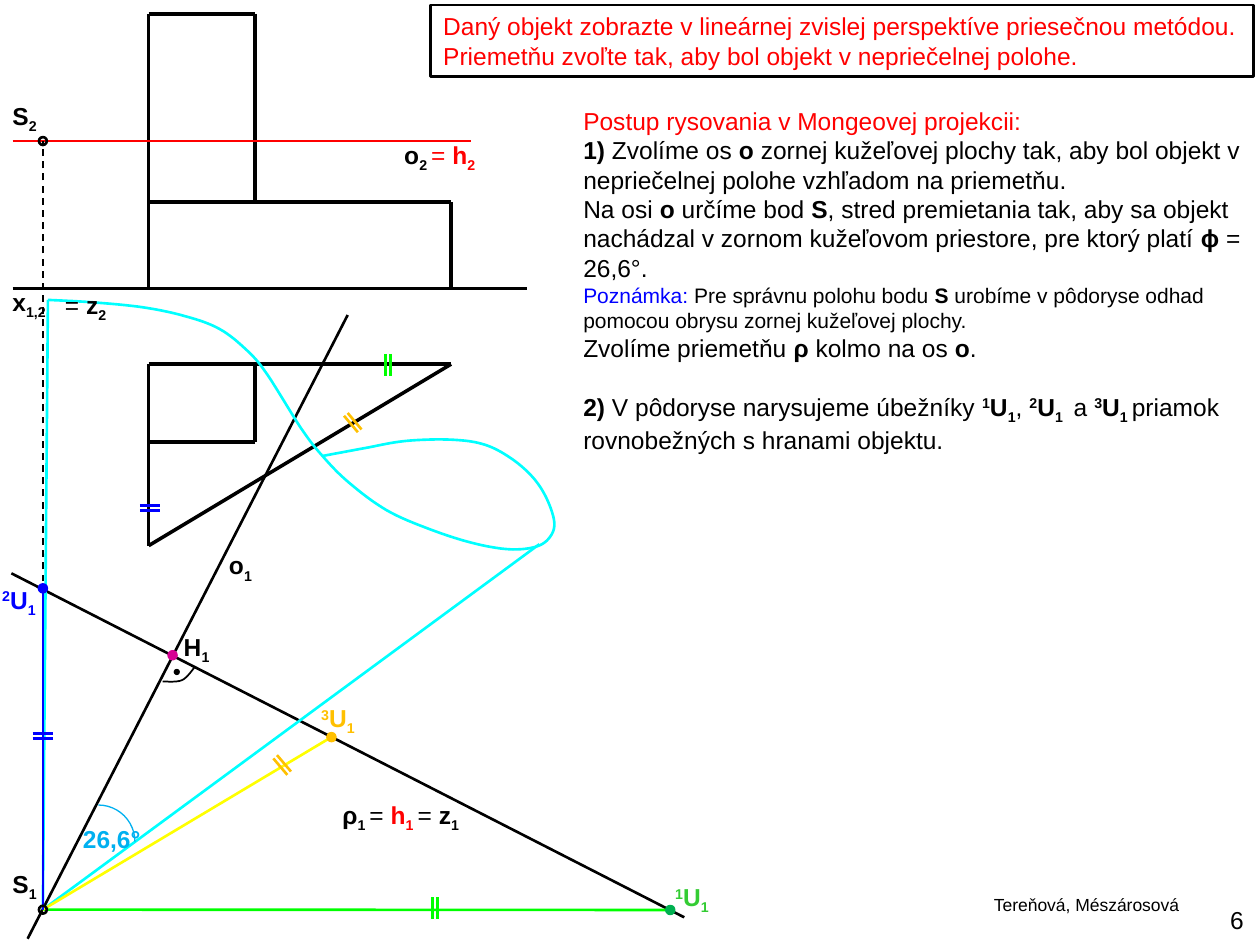
import pptx
import pptx.dml.color
import pptx.enum.dml
import pptx.enum.shapes
import pptx.enum.text
import pptx.util
from pptx.oxml.ns import qn
from lxml import etree

Pt = pptx.util.Pt
RGB = pptx.dml.color.RGBColor
SHAPES = pptx.enum.shapes.MSO_SHAPE
ALIGN = pptx.enum.text.PP_ALIGN
BLACK = RGB(0, 0, 0)
RED = RGB(255, 0, 0)
BLUE = RGB(0, 0, 255)
GREEN = RGB(0, 255, 0)
CYAN = RGB(0, 255, 255)
YELLOW = RGB(255, 255, 0)
ORANGE = RGB(0xFF, 0xC0, 0)
MAGENTA = RGB(0xD6, 0, 0x93)
DARK_GREEN = RGB(0, 0xB0, 0x50)
LABEL_GREEN = RGB(0x33, 0xCC, 0x33)
SKY = RGB(0, 0xB0, 0xF0)

# Points shared by several elements of the construction
S1, S2 = (24.5, 519.8), (24.5, 80.6)
U1, U2, U3 = (383, 520), (24.5, 336.2), (189.4, 421.2)
H1 = (98.6, 374.4)

BASELINES = {"^": "30000", "_": "-25000"}

FRONT_VIEW = [
    [(85, 115.5), (85, 165), (257.8, 165), (257.8, 115.5), (85, 115.5)],
    [(85, 115.5), (85, 7.9), (145.8, 7.9), (145.8, 115.5)],
]
TOP_VIEW = [
    [(85, 208.1), (257.8, 208.1), (85, 311.8), (85, 208.1)],
    [(145.8, 208.1), (145.8, 252.7), (85, 252.7)],
]
CONE_OUTLINE = [
    (27.4, 171.4), (53.3, 172.8), (82.1, 175.7), (105.8, 180.7), (125.3, 187.9),
    (141.1, 200.2), (152.6, 213.8), (172.1, 244.8), (184.3, 260.6), (199.4, 275.8),
    (221, 291.6), (245.5, 302.4), (270, 310.3), (290.9, 313.9), (306, 312.5),
    (313.9, 307.4), (316.8, 298.8), (312.5, 285.1), (304.6, 272.9), (292.3, 262.1),
    (277.2, 254.2), (258.5, 251.3), (231.8, 252), (207.4, 256.3), (184.3, 260.6),
]
RIGHT_ANGLE = [(111.6, 380.9), (104.1, 388.7), (92.9, 389.5)]

# Parallel marks: start, end, offset of the second stroke, colour
MARKS = [
    ((220.3, 202.3), (220.3, 214.6), (2.9, 0), GREEN),
    ((247, 512.6), (247, 524.9), (2.9, 0), GREEN),
    ((79.9, 288.7), (91.4, 288.7), (0, 2.9), BLUE),
    ((18.7, 419), (30.2, 419), (0, 2.9), BLUE),
    ((196.6, 237.6), (204.5, 247), (2.1, -1.6), ORANGE),
    ((156.2, 433.4), (164.2, 442.8), (2.1, -1.9), ORANGE),
]

# Labels: left, top, width, spans of (text, marks, colour); marks are b, ^, _
LABELS = [
    (0, 54, 29.5, [("S", "b"), ("2", "b_")]),
    (0, 493.2, 29.5, [("S", "b"), ("1", "b_")]),
    (378.7, 500.4, 35.3, [("1", "b^", LABEL_GREEN), ("U", "b", LABEL_GREEN), ("1", "b_", LABEL_GREEN)]),
    (-5.8, 330.5, 35.3, [("2", "b^", BLUE), ("U", "b", BLUE), ("1", "b_", BLUE)]),
    (176.4, 398.2, 35.3, [("3", "b^", ORANGE), ("U", "b", ORANGE), ("1", "b_", ORANGE)]),
    (123.8, 311, 28, [("o", "b"), ("1", "b_")]),
    (97.9, 357.8, 30.2, [("H", "b"), ("1", "b_")]),
    (188.6, 453.6, 83.5, [("ρ", "b"), ("1 ", "b_"), ("= ", ""), ("h", "b", RED),
                          ("1 ", "b_", RED), ("= ", ""), ("z", "b"), ("1", "b_")]),
    (223.9, 76.3, 56.9, [("o", "b"), ("2 ", "b_"), ("=", "", RED), (" h", "b", RED), ("2", "b_", RED)]),
    (0, 160.6, 35.3, [("x", "b"), ("1,2", "b_")]),
    (30, 162, 39, [("= ", ""), ("z", "b"), ("2", "b_")]),
    (40.3, 467.3, 47.5, [("26,6°", "b", SKY)]),
]

TASK = [("Daný objekt zobrazte v lineárnej zvislej perspektíve priesečnou metódou. "
         "Priemetňu zvoľte tak, aby bol objekt v nepriečelnej polohe.", "", RED)]
STEPS = [
    [("Postup rysovania v Mongeovej projekcii:", "", RED)],
    [("1) ", "b"), ("Zvolíme os ", ""), ("o ", "b"),
     ("zornej kužeľovej plochy tak, aby bol objekt v nepriečelnej polohe vzhľadom na priemetňu.", "")],
    [("Na osi ", ""), ("o", "b"), (" určíme bod ", ""), ("S", "b"),
     (", stred premietania tak, aby sa objekt nachádzal v zornom kužeľovom priestore, pre ktorý platí ", ""),
     ("ϕ", "b"), (" = 26,6°.", "")],
    [("Poznámka: ", "", BLUE, 12), ("Pre správnu polohu bodu ", "", BLACK, 12), ("S ", "b", BLACK, 12),
     ("urobíme v pôdoryse odhad pomocou obrysu zornej kužeľovej plochy.", "", BLACK, 12)],
    [("Zvolíme priemetňu ", ""), ("ρ", "b"), (" kolmo na os ", ""), ("o", "b"), (".", "")],
    [("2) ", "b"), ("V pôdoryse narysujeme úbežníky ", ""), ("1", "b^"), ("U", "b"), ("1", "b_"),
     (", ", ""), ("2", "b^"), ("U", "b"), ("1 ", "b_"), (" a ", ""), ("3", "b^"), ("U", "b"),
     ("1 ", "b_"), ("priamok", "")],
    [("rovnobežných s hranami objektu.", "")],
]


def style_line(line, colour, width):
    line.color.rgb = colour
    line.width = Pt(width)


def add_line(page, start, end, colour=BLACK, width=1.5, dashed=False):
    line = page.shapes.add_connector(
        pptx.enum.shapes.MSO_CONNECTOR.STRAIGHT, *map(Pt, (*start, *end)))
    style_line(line.line, colour, width)
    if dashed:
        line.line.dash_style = pptx.enum.dml.MSO_LINE.DASH
    etree.SubElement(line._element.spPr, qn("a:effectLst"))


def add_shape(page, kind, left, top, width, height, colour, weight=1.5, fill=None):
    shape = page.shapes.add_shape(kind, *map(Pt, (left, top, width, height)))
    finish_shape(shape, colour, weight, fill)
    return shape


def finish_shape(shape, colour, weight, fill=None):
    shape.shadow.inherit = False
    style_line(shape.line, colour, weight)
    if fill is None:
        shape.fill.background()
    else:
        shape.fill.solid()
        shape.fill.fore_color.rgb = fill


def add_dot(page, centre, colour, fill=None, size=4.5):
    x, y = centre
    add_shape(page, SHAPES.OVAL, x - size / 2, y - size / 2, size, size, colour, fill=fill)


def add_curve(page, knots, colour, weight, steps=8):
    """Draw a Catmull-Rom curve through the knots."""
    ends = [knots[0], *knots, knots[-1]]
    dots = []
    for a, b, c, d in zip(ends, ends[1:], ends[2:], ends[3:]):
        for t in (step / steps for step in range(1, steps + 1)):
            dots.append(tuple(Pt(
                q + (r - p) * t / 2 + (2 * p - 5 * q + 4 * r - s) * t ** 2 / 2
                + (3 * q - p - 3 * r + s) * t ** 3 / 2) for p, q, r, s in zip(a, b, c, d)))
    builder = page.shapes.build_freeform(*map(Pt, knots[0]))
    builder.add_line_segments(dots, close=False)
    finish_shape(builder.convert_to_shape(), colour, weight)


def add_span(para, text, marks="", colour=BLACK, size=14):
    span = para.add_run()
    span.text = text
    for name, value in {"name": "Arial", "size": Pt(size), "bold": "b" in marks}.items():
        setattr(span.font, name, value)
    span.font.color.rgb = colour
    for mark, offset in BASELINES.items():
        if mark in marks:
            span._r.get_or_add_rPr().set("baseline", offset)


def fill_text(box, paragraphs, wrap=False, align=ALIGN.LEFT, anchor=pptx.enum.text.MSO_ANCHOR.TOP):
    frame = box.text_frame
    settings = {"word_wrap": wrap, "vertical_anchor": anchor,
                "auto_size": pptx.enum.text.MSO_AUTO_SIZE.SHAPE_TO_FIT_TEXT}
    for name, value in settings.items():
        setattr(frame, name, value)
    for index, spans in enumerate(paragraphs):
        para = frame.add_paragraph() if index else frame.paragraphs[0]
        para.alignment = align
        for span in spans:
            add_span(para, *span)
    return frame


def add_text(page, left, top, width, height, paragraphs, **layout):
    box = page.shapes.add_textbox(*map(Pt, (left, top, width, height)))
    return fill_text(box, paragraphs, **layout)


def main():
    deck = pptx.Presentation()
    deck.slide_width, deck.slide_height = Pt(720), Pt(540)
    page = deck.slides.add_slide(deck.slide_layouts[6])

    # Axis, base line and the two views of the object
    add_line(page, (15.8, 536.4), (198.7, 180))
    add_line(page, (7.2, 165), (301, 165))
    for outline in FRONT_VIEW + TOP_VIEW:
        for start, end in zip(outline, outline[1:]):
            add_line(page, start, end, width=2)

    # Picture plane, viewing cone and horizon
    add_line(page, (6.5, 327.6), (391, 524.2))
    for end in (CONE_OUTLINE[0], (308.2, 311)):
        add_line(page, S1, end, CYAN)
    add_line(page, (7.2, 80.6), (269.3, 80.6), RED)
    add_curve(page, CONE_OUTLINE, CYAN, 1.5)

    # Rays to the vanishing points
    add_line(page, S1, S2, width=1, dashed=True)
    for end, colour in ((U1, GREEN), (U3, YELLOW), (U2, BLUE)):
        add_line(page, S1, end, colour)
    for centre, colour in ((U2, BLUE), (U3, ORANGE), (H1, MAGENTA), (U1, DARK_GREEN)):
        add_dot(page, centre, colour, colour)
    for centre in (S1, S2):
        add_dot(page, centre, BLACK)

    # Angles and parallel marks
    add_shape(page, SHAPES.ARC, 35.3, 460, 41.8, 41.8, SKY, 0.75)
    add_curve(page, RIGHT_ANGLE, BLACK, 1)
    add_dot(page, (101, 384), BLACK, BLACK, 2)
    for start, end, (dx, dy), colour in MARKS:
        for k in (0, 1):
            add_line(page, *((x + k * dx, y + k * dy) for x, y in (start, end)), colour)

    # Labels and explanatory text
    for left, top, width, spans in LABELS:
        add_text(page, left, top, width, 24.5, [spans])
    steps = add_text(page, 326.2, 56.9, 390.2, 205.9, STEPS, wrap=True)
    steps.paragraphs[5].space_before = Pt(17)
    task = add_shape(page, SHAPES.RECTANGLE, 246.2, 2.9, 470.2, 41, BLACK)
    fill_text(task, [TASK], wrap=True)

    # Authors and page number
    add_text(page, 560.9, 507.6, 122.4, 19.4, [[("Tereňová, Mészárosová", "", BLACK, 10)]])
    add_text(page, 686.2, 513.4, 31.7, 24.5, [[("6", "")]], align=ALIGN.RIGHT,
             anchor=pptx.enum.text.MSO_ANCHOR.MIDDLE)

    deck.save("out.pptx")


if __name__ == "__main__":
    main()
